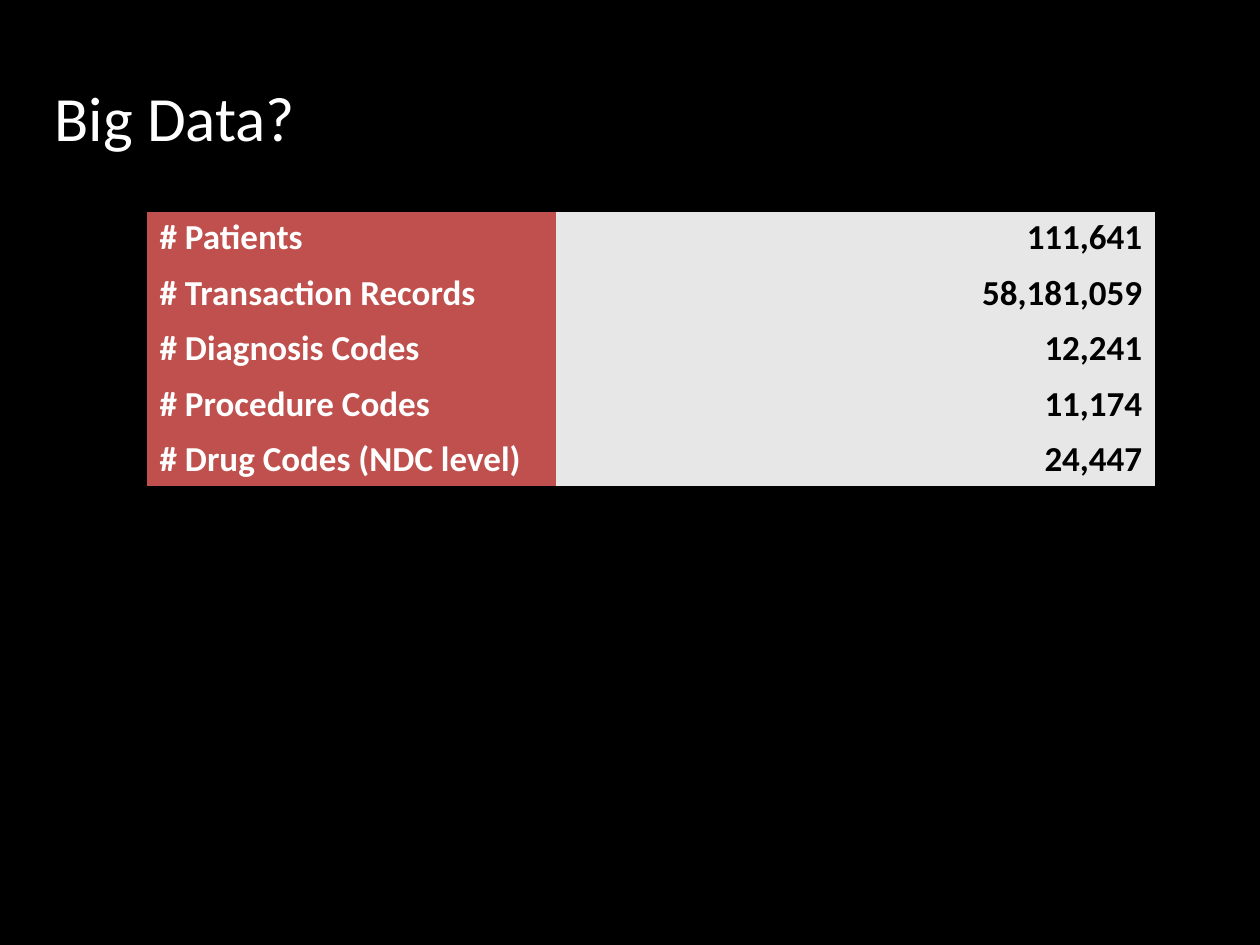
from dataclasses import dataclass
from lxml.etree import SubElement as Sub
from pptx import Presentation as Deck
from pptx.dml.color import RGBColor as Rgb
from pptx.enum.text import MSO_ANCHOR as Anchor, MSO_AUTO_SIZE as Fit, PP_ALIGN as Align
from pptx.oxml import parse_xml
from pptx.oxml.ns import nsdecls, qn
from pptx.util import Inches, Pt


@dataclass(frozen=True)
class Theme:
    font: str = "Calibri"
    back: str = "000000"
    light: str = "FFFFFF"
    dark: str = "000000"
    label: str = "C0504D"
    value: str = "E7E7E7"
    rule: str = "000000"
    head: int = 36
    body: int = 20
    line: int = 2
    plain: str = "{2D5ABB26-0587-4C30-8999-92F81FD0307C}"  # no style, no grid


class Page:
    """Holds the theme and slide; lengths are columns and rows of a 12 x 9 grid."""

    def __init__(self, deck, theme):
        self.theme = theme
        self.slide = deck.slides.add_slide(deck.slide_layouts[5])
        self.col, self.row = deck.slide_width / 12, deck.slide_height / 9
        fill = self.slide.background.fill
        fill.solid()
        fill.fore_color.rgb = Rgb.from_string(theme.back)

    def box(self, x, y, w, h):
        return [round(n) for n in (x * self.col, y * self.row, w * self.col, h * self.row)]

    def label(self, frame, text, size, color, bold=False, align=Align.LEFT):
        para = frame.paragraphs[0]
        para.alignment = align
        run = para.add_run()
        run.text = text
        font = run.font
        font.name, font.size, font.bold = self.theme.font, Pt(size), bold
        font.color.rgb = Rgb.from_string(color)

    def title(self, text, *area):
        shape = self.slide.shapes.title
        shape.left, shape.top, shape.width, shape.height = self.box(*area)
        frame = shape.text_frame
        frame.auto_size = Fit.NONE
        frame.vertical_anchor = Anchor.MIDDLE
        self.label(frame, text, self.theme.head, self.theme.light)

    def edge(self, cell, side):
        line = parse_xml(f'<a:{side} {nsdecls("a")} w="{Pt(self.theme.line)}"/>')
        fill = Sub(line, qn("a:solidFill"))
        Sub(fill, qn("a:srgbClr")).set("val", self.theme.rule)
        cell._tc.get_or_add_tcPr().insert(0, line)

    def table(self, data, widths, *area):
        look = self.theme
        table = self.slide.shapes.add_table(len(data), len(widths), *self.box(*area)).table
        table.first_row = table.horz_banding = False
        table._tbl.tblPr.find(qn("a:tableStyleId")).text = look.plain
        for col, width in zip(table.columns, widths):
            col.width = round(width * self.col)
        # Label and value columns: fill, text colour, alignment, anchor
        styles = ((look.label, look.light, Align.LEFT, Anchor.TOP),
                  (look.value, look.dark, Align.RIGHT, Anchor.MIDDLE))
        for r, texts in enumerate(data):
            for c, (text, (fill, ink, align, anchor)) in enumerate(zip(texts, styles)):
                cell = table.cell(r, c)
                cell.fill.solid()
                cell.fill.fore_color.rgb = Rgb.from_string(fill)
                cell.vertical_anchor = anchor
                self.label(cell.text_frame, text, look.body, ink, True, align)
                # Rules close the table above and below
                if r == 0:
                    self.edge(cell, "lnT")
                if r == len(data) - 1:
                    self.edge(cell, "lnB")


def main():
    deck = Deck()
    deck.slide_width, deck.slide_height = Inches(10), Inches(7.5)
    page = Page(deck, Theme())

    # Heading
    page.title("Big Data?", 0.4, 0.64, 10.8, 0.94)

    # Record counts
    counts = (
        ("# Patients", "111,641"),
        ("# Transaction Records", "58,181,059"),
        ("# Diagnosis Codes", "12,241"),
        ("# Procedure Codes", "11,174"),
        ("# Drug Codes (NDC level)", "24,447"),
    )
    page.table(counts, (3.9, 5.7), 1.4, 2, 9.6, 2.6)
    deck.save("out.pptx")


if __name__ == "__main__":
    main()
